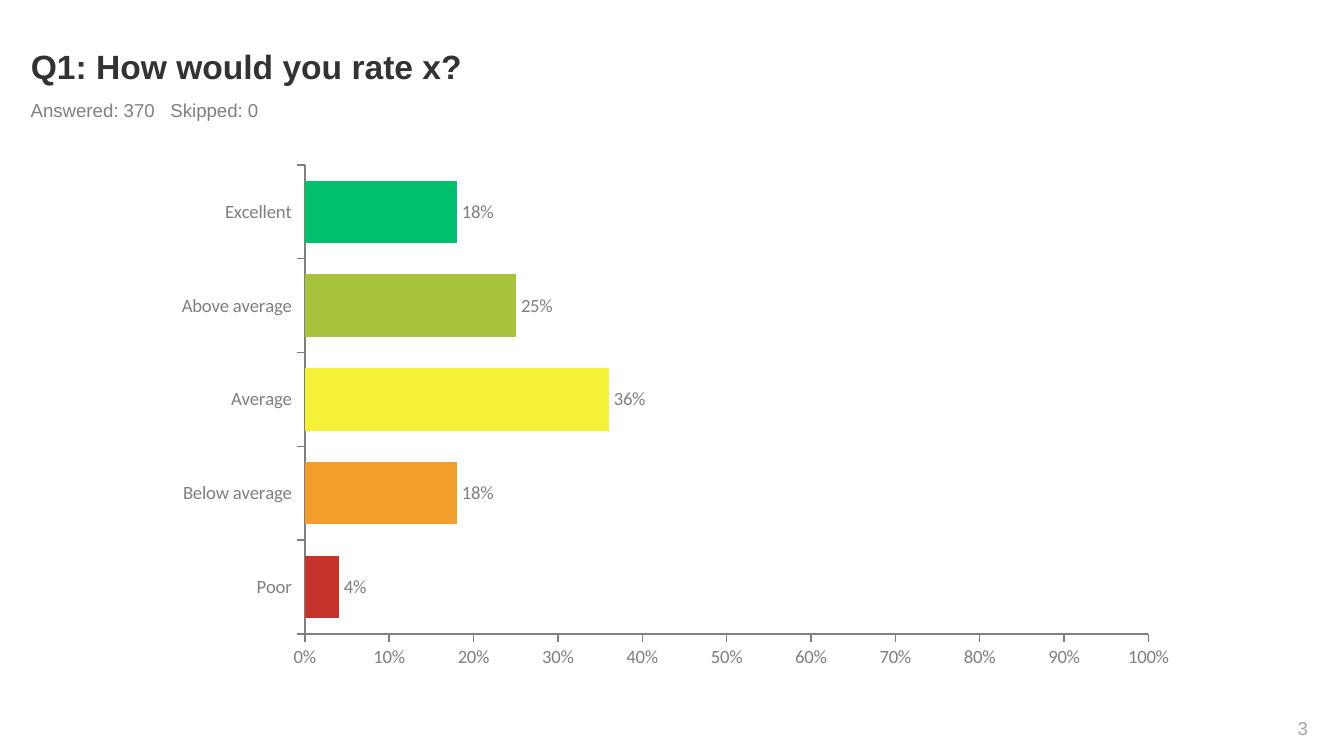
import pptx
import pptx.chart.data
import pptx.dml.color
import pptx.enum.chart
import pptx.enum.text
import pptx.util
from lxml import etree
from pptx.util import Inches

GRAY = "7F7F7F"
RATINGS = [
    ("Excellent", 0.18, "00BF6F"),
    ("Above average", 0.25, "A7C23D"),
    ("Average", 0.36, "F4F136"),
    ("Below average", 0.18, "F19E2D"),
    ("Poor", 0.04, "C6332A"),
]


def rgb(color):
    return pptx.dml.color.RGBColor.from_string(color)


def style_font(font, size, color, name="Arial", bold=False):
    font.size = pptx.util.Pt(size)
    font.name = name
    font.bold = bold
    font.color.rgb = rgb(color)


def add_text(slide, box, text, size, color):
    """Add a one-paragraph text box and return its text frame."""
    frame = slide.shapes.add_textbox(*box).text_frame
    frame.word_wrap = True
    paragraph = frame.paragraphs[0]
    paragraph.text = text
    style_font(paragraph.font, size, color)
    return frame


def add_heading(slide, left, top, width):
    title_height = Inches(0.6)
    title = slide.shapes.title
    title.left, title.top, title.width, title.height = left, top, width, title_height
    frame = title.text_frame
    frame.word_wrap = True
    frame.vertical_anchor = pptx.enum.text.MSO_ANCHOR.BOTTOM
    paragraph = frame.paragraphs[0]
    paragraph.text = "Q1: How would you rate x?"
    paragraph.alignment = pptx.enum.text.PP_ALIGN.LEFT
    style_font(paragraph.font, 18, "333333", bold=True)

    box = (left, top + title_height, width, Inches(0.26))
    counts = add_text(slide, box, "Answered: 370\tSkipped: 0", 10, "808080").paragraphs[0]
    counts.space_before = pptx.util.Pt(2)
    add_tab_stop(counts, Inches(1.04))


def add_tab_stop(paragraph, position):
    properties = paragraph._p.get_or_add_pPr()
    qualified = pptx.oxml.ns.qn
    tabs = etree.Element(qualified("a:tabLst"))
    etree.SubElement(tabs, qualified("a:tab"), pos=str(int(position)), algn="l")
    properties.find(qualified("a:defRPr")).addprevious(tabs)


def style_axis(axis):
    axis.has_major_gridlines = False
    axis.major_tick_mark = pptx.enum.chart.XL_TICK_MARK.OUTSIDE
    axis.minor_tick_mark = pptx.enum.chart.XL_TICK_MARK.NONE
    axis.format.line.color.rgb = rgb(GRAY)
    axis.format.line.width = pptx.util.Pt(0.75)
    style_font(axis.tick_labels.font, 10, GRAY, "Calibri")


def add_rating_chart(slide, box):
    names, shares, colors = zip(*RATINGS)
    data = pptx.chart.data.CategoryChartData(number_format="0%")
    data.categories = names
    data.add_series("Series 1", shares)
    chart = slide.shapes.add_chart(
        pptx.enum.chart.XL_CHART_TYPE.BAR_CLUSTERED, *box, data
    ).chart
    chart.has_legend = False
    chart.has_title = False
    style_font(chart.font, 18, "333333", "Calibri")

    categories, values = chart.category_axis, chart.value_axis
    style_axis(categories)
    categories.reverse_order = True
    categories.tick_label_position = pptx.enum.chart.XL_TICK_LABEL_POSITION.LOW
    style_axis(values)
    values.tick_label_position = pptx.enum.chart.XL_TICK_LABEL_POSITION.NEXT_TO_AXIS
    values.minimum_scale, values.maximum_scale, values.major_unit = 0, 1, 0.1
    values.tick_labels.number_format = "0%"
    values.tick_labels.number_format_is_linked = False
    # Crossing at the last category keeps the value axis at the bottom.
    values._element.find(pptx.oxml.ns.qn("c:crosses")).set("val", "max")

    plot = chart.plots[0]
    plot.gap_width, plot.overlap = 50, 100
    plot.vary_by_categories = False
    series = plot.series[0]
    series.format.fill.solid()
    series.format.fill.fore_color.rgb = rgb(colors[0])
    for index, color in enumerate(colors):
        fill = series.points[index].format.fill
        fill.solid()
        fill.fore_color.rgb = rgb(color)

    labels = series.data_labels
    labels.show_value = True
    labels.number_format = "0%"
    labels.number_format_is_linked = False
    labels.position = pptx.enum.chart.XL_LABEL_POSITION.OUTSIDE_END
    style_font(labels.font, 10, GRAY, "Calibri")


def add_page_number(slide, box):
    frame = add_text(slide, box, "3", 10, "A3A3A3")
    frame.vertical_anchor = pptx.enum.text.MSO_ANCHOR.MIDDLE
    frame.paragraphs[0].alignment = pptx.enum.text.PP_ALIGN.RIGHT


def main():
    presentation = pptx.Presentation()
    presentation.slide_width = Inches(10)
    presentation.slide_height = presentation.slide_width * 9 // 16
    slide = presentation.slides.add_slide(presentation.slide_layouts[5])
    add_heading(slide, Inches(0.13), Inches(0.09), Inches(9))
    add_rating_chart(slide, (Inches(1.2), Inches(1.15), Inches(7.65), Inches(3.9)))
    add_page_number(slide, (Inches(9.15), Inches(5.27), Inches(0.68), Inches(0.3)))
    presentation.save("out.pptx")


if __name__ == "__main__":
    main()
